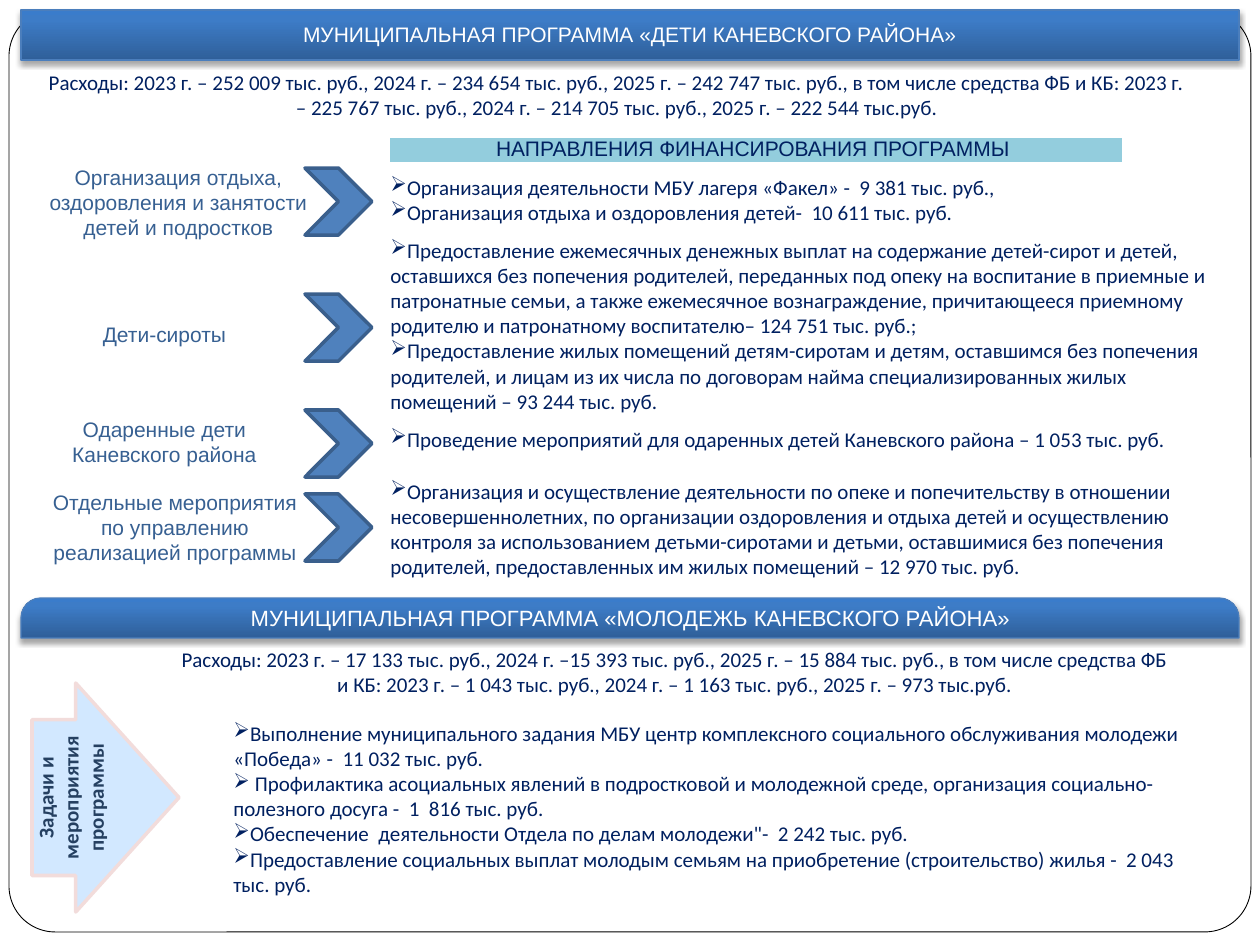
from dataclasses import dataclass

from pptx import Presentation
from pptx.dml.color import RGBColor
from pptx.enum.shapes import MSO_SHAPE
from pptx.enum.text import MSO_ANCHOR, MSO_AUTO_SIZE, PP_ALIGN
from pptx.oxml import parse_xml
from pptx.oxml.ns import nsdecls, qn
from pptx.util import Emu, Pt

PX_PER_INCH = 126


def px(length):
    return Emu(round(length * 914400 / PX_PER_INCH))


@dataclass(frozen=True)
class Theme:
    heading_font: str = "Arial"
    body_font: str = "Calibri"
    size: float = 12
    banner_size: float = 12.6
    white: str = "FFFFFF"
    black: str = "000000"
    navy: str = "002060"
    label: str = "376092"
    chevron: str = "4F81BD"
    chevron_line: str = "3A5F8C"
    banner_line: str = "4B7EBC"
    banner_stops: tuple = ((0, "2F5F99"), (80, "3D7CC7"), (100, "3A7CCB"))
    table_fill: str = "93CDDD"
    arrow: str = "99CCFF"
    arrow_line: str = "F2DCDB"
    arrow_text: str = "254061"


class SlideBuilder:
    def __init__(self, slide, theme):
        self.slide = slide
        self.theme = theme

    def add_text(self, paragraph, text, font, color, size=None, bold=False,
                 align=PP_ALIGN.CENTER):
        paragraph.alignment = align
        run = paragraph.add_run()
        run.text = text
        run.font.name = font
        run.font.size = Pt(size or self.theme.size)
        run.font.bold = bold
        run.font.color.rgb = RGBColor.from_string(color)

    def shape(self, kind, box, fill, line, line_width, adjustments=()):
        shape = self.slide.shapes.add_shape(kind, *map(px, box))
        shape.shadow.inherit = False
        shape.fill.solid()
        shape.fill.fore_color.rgb = RGBColor.from_string(fill)
        shape.line.color.rgb = RGBColor.from_string(line)
        shape.line.width = Pt(line_width)
        for index, value in enumerate(adjustments):
            shape.adjustments[index] = value
        return shape

    def banner(self, box, text, size, corner, anchor, bottom_inset, line_spacing):
        """Draw a heading bar with a vertical gradient and a soft shadow."""
        theme = self.theme
        shape = self.shape(MSO_SHAPE.ROUND_2_SAME_RECTANGLE, box, theme.chevron,
                           theme.banner_line, 0.75, (corner, 0))
        stops = "".join(
            f'<a:gs pos="{position * 1000}"><a:srgbClr val="{color}"/></a:gs>'
            for position, color in theme.banner_stops)
        properties = shape.element.spPr
        properties.replace(properties.find(qn("a:solidFill")), parse_xml(
            f'<a:gradFill {nsdecls("a")} rotWithShape="1"><a:gsLst>{stops}</a:gsLst>'
            '<a:lin ang="16200000" scaled="0"/></a:gradFill>'))
        properties.find(qn("a:effectLst")).append(parse_xml(
            f'<a:outerShdw {nsdecls("a")} blurRad="{Pt(3.1)}" dist="{Pt(1.8)}" dir="5400000" '
            f'rotWithShape="0"><a:srgbClr val="{theme.black}"><a:alpha val="35000"/>'
            '</a:srgbClr></a:outerShdw>'))
        frame = shape.text_frame
        frame.vertical_anchor = anchor
        frame.margin_bottom = px(bottom_inset)
        paragraph = frame.paragraphs[0]
        paragraph.line_spacing = line_spacing
        self.add_text(paragraph, text, theme.heading_font, theme.white, size)

    def text_frame(self, box):
        frame = self.slide.shapes.add_textbox(*map(px, box)).text_frame
        frame.word_wrap = True
        frame.auto_size = MSO_AUTO_SIZE.SHAPE_TO_FIT_TEXT
        return frame

    def centred_text(self, box, text, font, color):
        self.add_text(self.text_frame(box).paragraphs[0], text, font, color)

    def bullets(self, box, items):
        frame = self.text_frame(box)
        for index, item in enumerate(items):
            paragraph = frame.add_paragraph() if index else frame.paragraphs[0]
            self.add_text(paragraph, item, self.theme.body_font, self.theme.navy,
                          align=PP_ALIGN.LEFT)
            paragraph_properties = paragraph._p.get_or_add_pPr()
            paragraph_properties.set("marL", "0")
            paragraph_properties.set("indent", "0")
            paragraph_properties.append(parse_xml(f'<a:buChar {nsdecls("a")} char="➢"/>'))

    def heading_table(self, box, text):
        table = self.slide.shapes.add_table(1, 1, *map(px, box)).table
        cell = table.cell(0, 0)
        cell.margin_left = cell.margin_right = cell.margin_top = cell.margin_bottom = 0
        cell.fill.solid()
        cell.fill.fore_color.rgb = RGBColor.from_string(self.theme.table_fill)
        self.add_text(cell.text_frame.paragraphs[0], text, self.theme.heading_font,
                      self.theme.navy)

    def chevron(self, top):
        self.shape(MSO_SHAPE.CHEVRON, (305, top, 67, 67), self.theme.chevron,
                   self.theme.chevron_line, 2)

    def tasks_arrow(self, box, text):
        """Draw the translucent right-pointing arrow with upward text."""
        theme = self.theme
        shape = self.shape(MSO_SHAPE.LEFT_ARROW, box, theme.arrow, theme.arrow_line, 2,
                           (0.681, 0.703))
        shape.rotation = 180
        color = shape.element.spPr.find(qn("a:solidFill"))[0]
        color.append(parse_xml(f'<a:alpha {nsdecls("a")} val="44000"/>'))
        frame = shape.text_frame
        frame.word_wrap = True
        frame.vertical_anchor = MSO_ANCHOR.MIDDLE
        frame._txBody.bodyPr.set("vert", "vert")
        self.add_text(frame.paragraphs[0], text, theme.body_font, theme.arrow_text, bold=True)


# Each direction: label box, label, chevron top, bullet box, bullets
DIRECTIONS = [
    ((21, 158, 315, 140), "Организация отдыха, оздоровления и занятости детей и подростков", 168,
     (378, 168, 770, 63),
     ["Организация деятельности МБУ лагеря «Факел» -  9 381 тыс. руб.,",
      "Организация отдыха и оздоровления детей-  10 611 тыс. руб."]),
    ((32, 315, 265, 38), "Дети-сироты", 294,
     (378, 231, 861, 190),
     ["Предоставление ежемесячных денежных выплат на содержание детей-сирот и детей, оставшихся "
      "без попечения родителей, переданных под опеку на воспитание в приемные и патронатные семьи, "
      "а также ежемесячное вознаграждение, причитающееся приемному родителю и патронатному "
      "воспитателю– 124 751 тыс. руб.;",
      "Предоставление жилых помещений детям-сиротам и детям, оставшимся без попечения родителей, "
      "и лицам из их числа по договорам найма специализированных жилых помещений – "
      "93 244 тыс. руб."]),
    ((32, 410, 265, 63), "Одаренные дети Каневского района", 410,
     (378, 420, 819, 38),
     ["Проведение мероприятий для одаренных детей Каневского района – 1 053 тыс. руб."]),
    ((32, 483, 286, 89), "Отдельные мероприятия по управлению реализацией программы", 494,
     (378, 472, 861, 115),
     ["Организация и осуществление деятельности по опеке и попечительству в отношении "
      "несовершеннолетних, по организации оздоровления и отдыха детей и осуществлению контроля "
      "за использованием детьми-сиротами и детьми, оставшимися без попечения родителей, "
      "предоставленных им жилых помещений – 12 970 тыс. руб."]),
]

YOUTH_TASKS = [
    "Выполнение муниципального задания МБУ центр комплексного социального обслуживания молодежи "
    "«Победа» -  11 032 тыс. руб.",
    " Профилактика асоциальных явлений в подростковой и молодежной среде, организация "
    "социально-полезного досуга -  1  816 тыс. руб.",
    "Обеспечение  деятельности Отдела по делам молодежи\"-  2 242 тыс. руб.",
    "Предоставление социальных выплат молодым семьям на приобретение (строительство) жилья -  "
    "2 043 тыс. руб.",
]


def main():
    presentation = Presentation()
    presentation.slide_width, presentation.slide_height = px(1260), px(945)
    theme = Theme()
    builder = SlideBuilder(presentation.slides.add_slide(presentation.slide_layouts[6]), theme)

    builder.shape(MSO_SHAPE.ROUNDED_RECTANGLE, (9, 10, 1242, 922), theme.white, theme.black,
                  0.5, (0.05,))

    builder.banner((21, 10, 1218, 50), "МУНИЦИПАЛЬНАЯ ПРОГРАММА «ДЕТИ КАНЕВСКОГО РАЙОНА»",
                   theme.size, 0, MSO_ANCHOR.BOTTOM, 13, 1.0)
    builder.centred_text(
        (32, 63, 1170, 63),
        "Расходы: 2023 г. – 252 009 тыс. руб., 2024 г. – 234 654 тыс. руб., 2025 г. – "
        "242 747 тыс. руб., в том числе средства ФБ и КБ: 2023 г. – 225 767 тыс. руб., "
        "2024 г. – 214 705 тыс. руб., 2025 г. – 222 544 тыс.руб.",
        theme.body_font, theme.navy)
    builder.heading_table((389, 137, 734, 25), "НАПРАВЛЕНИЯ ФИНАНСИРОВАНИЯ ПРОГРАММЫ ")
    for label_box, label, chevron_top, bullet_box, items in DIRECTIONS:
        builder.centred_text(label_box, label, theme.heading_font, theme.label)
        builder.chevron(chevron_top)
        builder.bullets(bullet_box, items)

    builder.banner((21, 598, 1218, 40), "МУНИЦИПАЛЬНАЯ ПРОГРАММА «МОЛОДЕЖЬ КАНЕВСКОГО РАЙОНА»",
                   theme.banner_size, 0.5, MSO_ANCHOR.MIDDLE, 6, 0.7)
    builder.centred_text(
        (168, 640, 1014, 63),
        "Расходы: 2023 г. – 17 133 тыс. руб., 2024 г. –15 393 тыс. руб., 2025 г. – "
        "15 884 тыс. руб., в том числе средства ФБ и КБ: 2023 г. – 1 043 тыс. руб., "
        "2024 г. – 1 163 тыс. руб., 2025 г. – 973 тыс.руб.",
        theme.body_font, theme.navy)
    builder.tasks_arrow((32, 683, 147, 229), "Задачи и мероприятия программы")
    builder.bullets((221, 714, 976, 190), YOUTH_TASKS)

    presentation.save("out.pptx")


if __name__ == "__main__":
    main()
